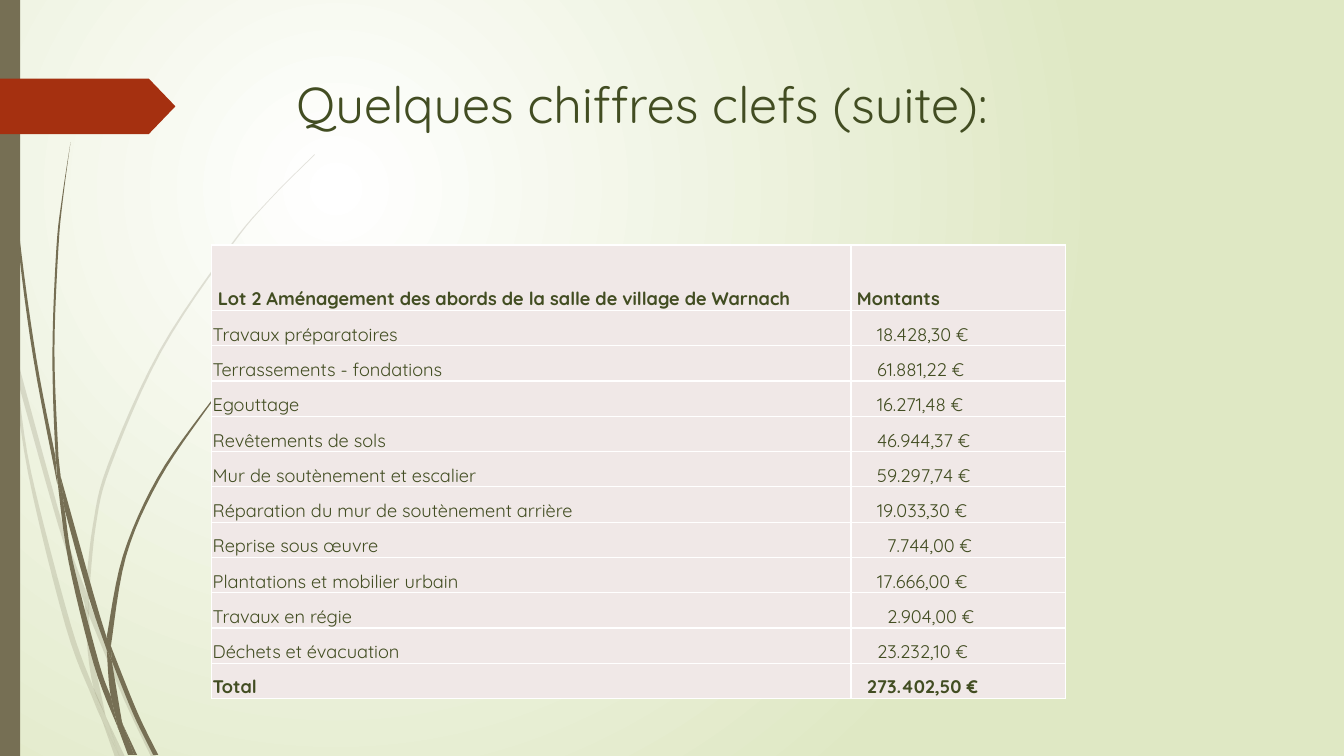
import pptx
import pptx.dml.color
import pptx.enum.shapes
import pptx.enum.text
import pptx.oxml
import pptx.oxml.ns
import pptx.util
from lxml import etree

Inches = pptx.util.Inches
Pt = pptx.util.Pt
qn = pptx.oxml.ns.qn
SHAPE = pptx.enum.shapes.MSO_SHAPE
ANCHOR = pptx.enum.text.MSO_ANCHOR

FONT = "Quicksand"
COLORS = {
    "white": "FFFFFF",
    "lime": "DFE8C4",
    "stem": "766F54",
    "rust": "A53010",
    "text": "424D22",
    "cell": "F0E8E7",
}

# Each leaf is a pair of edges: down one side, then back along the other.
PALE = [
    ([(0, 2.82), (.09, 3.22), (.11, 3.5)], [(.1, 3.44), (0, 2.99)]),
    ([(.14, 3.45), (.62, 5.2), (.85, 5.86)], [(.84, 5.99), (.58, 5.22), (.17, 3.76)]),
    ([(.88, 5.96), (1.27, 6.92), (1.55, 7.51)], [(1.5, 7.51), (1.23, 6.94), (.88, 6.1)]),
    ([(1.05, 7.11), (1.24, 7.51)], [(1.19, 7.51)]),
    ([(.11, 3.5), (.17, 3.76), (.31, 4.69), (.7, 6.19), (.93, 6.83)],
     [(1.01, 7.14), (.92, 6.93), (.65, 6.21), (.28, 4.7), (.11, 3.5)]),
    ([(.84, 5.99), (.87, 6.46), (.93, 6.83), (1.05, 7.11)], [(.91, 6.46), (.88, 6.08)]),
    ([(3.12, 1.53), (2.68, 1.97), (2.28, 2.44), (1.58, 3.48), (1.07, 4.61),
      (.92, 5.22), (.85, 5.84)],
     [(.88, 5.96), (.95, 5.22), (1.1, 4.62), (1.6, 3.49), (2.29, 2.45),
      (2.68, 1.98), (3.12, 1.54)]),
    ([(1.01, 7.14), (1.19, 7.51)], [(1.14, 7.51)]),
    ([(.85, 5.86), (.88, 5.96), (.88, 6.1)], [(.84, 5.99)]),
    ([(.93, 6.83), (1.05, 7.11), (1.19, 7.51)], [(1.01, 7.14)]),
]
DARK = [
    ([(.04, 0), (.08, 1.09), (.19, 2.32), (.36, 3.55), (.55, 4.53)],
     [(.57, 4.81), (.33, 3.55), (.17, 2.33), (.07, 1.1), (.03, 0)]),
    ([(.6, 4.72), (.93, 5.9), (1.06, 6.33)], [(1.06, 6.45), (.88, 5.92), (.64, 5.05)]),
    ([(1.1, 6.41), (1.36, 7.06), (1.57, 7.49)], [(1.52, 7.49), (1.32, 7.08), (1.11, 6.56)]),
    ([(.57, 4.77), (.64, 5.05), (.72, 5.56), (.98, 6.57), (1.1, 6.91)],
     [(1.17, 7.22), (.93, 6.59), (.68, 5.57), (.57, 4.77)]),
    ([(.7, 1.41), (.63, 1.93), (.58, 2.45), (.54, 3.49), (.58, 4.53)],
     [(.6, 4.72), (.55, 4.49), (.52, 3.49), (.56, 2.45), (.62, 1.93), (.7, 1.41)]),
    ([(1.22, 7.19), (1.36, 7.49)], [(1.33, 7.49)]),
    ([(.55, 4.49), (.6, 4.72), (.64, 5.05)], [(.57, 4.77)]),
    ([(2.6, 3.44), (2.31, 3.73), (2.04, 4.05), (1.56, 4.74), (1.22, 5.51), (1.06, 6.31)],
     [(1.1, 6.41), (1.25, 5.52), (1.58, 4.76), (2.05, 4.06), (2.31, 3.74), (2.61, 3.44)]),
    ([(1.17, 7.22), (1.31, 7.49)], [(1.27, 7.49)]),
    ([(1.06, 6.45), (1.1, 6.91), (1.22, 7.19)], [(1.21, 7.16), (1.11, 6.56)]),
    ([(1.06, 6.31), (1.1, 6.41), (1.11, 6.56)], [(1.06, 6.45)]),
    ([(1.1, 6.91), (1.22, 7.19), (1.33, 7.49)], [(1.3, 7.49), (1.17, 7.22)]),
]

HEAD = ("Lot 2 Aménagement des abords de la salle de village de Warnach", "Montants")
COSTS = [
    ("Travaux préparatoires", "18.428,30 €"),
    ("Terrassements - fondations", "61.881,22 €"),
    ("Egouttage", "16.271,48 €"),
    ("Revêtements de sols", "46.944,37 €"),
    ("Mur de soutènement et escalier", "59.297,74 €"),
    ("Réparation du mur de soutènement arrière", "19.033,30 €"),
    ("Reprise sous œuvre", "7.744,00 €"),
    ("Plantations et mobilier urbain", "17.666,00 €"),
    ("Travaux en régie", "2.904,00 €"),
    ("Déchets et évacuation", "23.232,10 €"),
    ("Total", "273.402,50 €"),
]


def rgb(name):
    return pptx.dml.color.RGBColor.from_string(COLORS[name])


def paint(shape, name, alpha=100):
    shape.shadow.inherit = False
    shape.fill.solid()
    shape.fill.fore_color.rgb = rgb(name)
    shape.line.fill.background()
    if alpha < 100:
        color = shape.fill._xPr.find(".//" + qn("a:srgbClr"))
        etree.SubElement(color, qn("a:alpha"), val=str(alpha * 1000))


def glow(slide):
    """Fill the background with a radial gradient centred in the upper left."""
    fill = slide.background.fill
    fill.gradient()
    for stop, name in zip(fill.gradient_stops, ("white", "lime")):
        stop.color.rgb = rgb(name)
    grad = fill._xPr.find(qn("a:gradFill"))
    for stop, pos in zip(grad.iter(qn("a:gs")), ("0", "100000")):
        stop.set("pos", pos)
    grad.remove(grad.find(qn("a:lin")))
    ring = etree.Element(qn("a:path"), {"path": "circle"})
    etree.SubElement(ring, qn("a:fillToRect"), l="50000", t="50000", r="100000", b="100000")
    grad.find(qn("a:gsLst")).addnext(ring)


def curve(knots, steps=6):
    """Return points on a smooth (Catmull-Rom) curve through the knots."""
    if len(knots) < 3:
        return knots
    ends = [knots[0], *knots, knots[-1]]
    points = [knots[0]]
    for a, b, c, d in zip(ends, ends[1:], ends[2:], ends[3:]):
        for step in range(1, steps + 1):
            t = step / steps
            points.append(tuple(
                (2 * q + (r - p) * t + (2 * p - 5 * q + 4 * r - s) * t ** 2
                 + (3 * q - p - 3 * r + s) * t ** 3) / 2
                for p, q, r, s in zip(a, b, c, d)))
    return points


def grass(slide, leaves, alpha):
    group = slide.shapes.add_group_shape()
    for down, back in leaves:
        points = [(Inches(x), Inches(y)) for x, y in curve(down) + curve(back)]
        pen = group.shapes.build_freeform(*points[0])
        pen.add_line_segments(points[1:], close=True)
        paint(pen.convert_to_shape(), "stem", alpha)


def block(slide, kind, box, name):
    shape = slide.shapes.add_shape(kind, *map(Inches, box))
    paint(shape, name)
    return shape


def style(para, size, bold=False):
    font = para.font
    font.name, font.size, font.bold = FONT, Pt(size), bold
    font.color.rgb = rgb("text")


def title(slide, text):
    frame = slide.shapes.add_textbox(*map(Inches, (2.84, .68, 9.75, 1.4))).text_frame
    frame.word_wrap = True
    frame.text = text
    style(frame.paragraphs[0], 36)


def fill_cell(cell, text, indent, bold):
    cell.text = text
    style(cell.text_frame.paragraphs[0], 13, bold)
    cell.vertical_anchor = ANCHOR.BOTTOM
    cell.margin_left = Inches(indent)
    cell.margin_right = cell.margin_top = Inches(.01)
    cell.margin_bottom = 0
    props = cell._tc.get_or_add_tcPr()
    for side in "LRTB":
        line = etree.SubElement(props, qn("a:ln" + side), w=str(Pt(1)))
        solid = etree.SubElement(line, qn("a:solidFill"))
        etree.SubElement(solid, qn("a:srgbClr"), val=COLORS["white"])
    cell.fill.solid()
    cell.fill.fore_color.rgb = rgb("cell")


def costs(slide):
    rows = [HEAD, *COSTS]
    grid = slide.shapes.add_table(len(rows), 2, *map(Inches, (2.1, 2.43, 8.47, 4.5))).table
    grid.first_row = grid.horz_banding = False
    for col, width in zip(grid.columns, (6.34, 2.13)):
        col.width = Inches(width)
    for i, (label, sum_) in enumerate(rows):
        head = i == 0
        bold = head or label == "Total"
        grid.rows[i].height = Inches(.65 if head else .35)
        # Shorter amounts start further right.
        shift = .06 if head else .26 + .1 * (11 - len(sum_))
        fill_cell(grid.cell(i, 0), label, .06 if head else .01, bold)
        fill_cell(grid.cell(i, 1), sum_, shift, bold)


def main():
    deck = pptx.Presentation()
    deck.slide_width, deck.slide_height = Inches(13.33), Inches(7.5)
    slide = deck.slides.add_slide(deck.slide_layouts[6])
    glow(slide)
    grass(slide, PALE, 20)
    grass(slide, DARK, 100)
    block(slide, SHAPE.RECTANGLE, (0, 0, .2, 7.5), "stem")
    arrow = block(slide, SHAPE.PENTAGON, (0, .78, 1.74, .55), "rust")
    arrow.adjustments[0] = .48
    title(slide, "Quelques chiffres clefs (suite):")
    costs(slide)
    deck.save("out.pptx")


if __name__ == "__main__":
    main()
